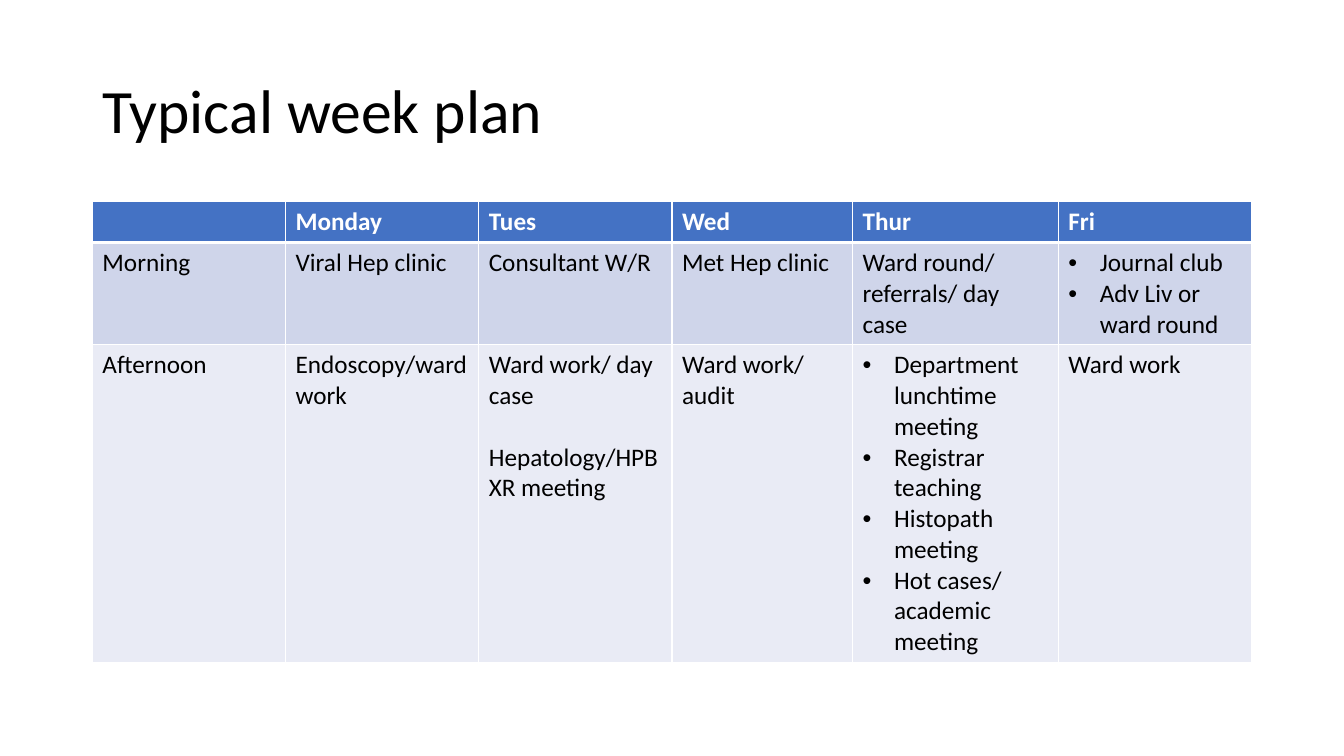
from lxml import etree
from pptx import Presentation
from pptx.dml.color import RGBColor
from pptx.enum.text import MSO_ANCHOR, MSO_AUTO_SIZE, PP_ALIGN
from pptx.oxml.ns import qn
from pptx.util import Pt

LEFT, MIDDLE, NO_FIT = PP_ALIGN.LEFT, MSO_ANCHOR.MIDDLE, MSO_AUTO_SIZE.NONE

BLACK = RGBColor(0x00, 0x00, 0x00)
WHITE = RGBColor(0xFF, 0xFF, 0xFF)
HEADER_BLUE = RGBColor(0x44, 0x72, 0xC4)
MORNING_BLUE = RGBColor(0xCF, 0xD5, 0xEA)
AFTERNOON_BLUE = RGBColor(0xE9, 0xEB, 0xF5)

LINE_GAP = 22
BULLET_INDENT = 22.5

# Each cell is a list of paragraphs; several activities become bullets
DAYS = ["", "Monday", "Tues", "Wed", "Thur", "Fri"]
MORNING = [
    ["Morning"],
    ["Viral Hep clinic"],
    ["Consultant W/R"],
    ["Met Hep clinic"],
    ["Ward round/ referrals/ day case"],
    ["• Journal club", "• Adv Liv or ward round"],
]
AFTERNOON = [
    ["Afternoon"],
    ["Endoscopy/ward work"],
    ["Ward work/ day case", "Hepatology/HPB XR meeting"],
    ["Ward work/ audit"],
    ["• Department lunchtime meeting", "• Registrar teaching",
     "• Histopath meeting", "• Hot cases/ academic meeting"],
    ["Ward work"],
]
DAY_WIDTHS = [138, 138, 138, 129, 147, 138]
# Row height, fill, text colour, bold, top and bottom border, cells
WEEK_ROWS = [
    (29.2, HEADER_BLUE, WHITE, True, 1, 3, [[day] for day in DAYS]),
    (72, MORNING_BLUE, BLACK, False, 3, 1, MORNING),
    (223.5, AFTERNOON_BLUE, BLACK, False, 1, 1, AFTERNOON),
]


class WeekSlide:
    """Holds the text style and the current slide."""

    def __init__(self, presentation, font="Calibri", size=18):
        self.slide = presentation.slides.add_slide(presentation.slide_layouts[5])
        self.font, self.size = font, size

    def style(self, paragraph, color, size=None, bold=False):
        paragraph.alignment = LEFT
        font = paragraph.font
        font.name, font.size, font.bold = self.font, Pt(size or self.size), bold
        font.color.rgb = color

    def title(self, text, left, top, width, height):
        heading = self.slide.shapes.title
        heading.left, heading.top = Pt(left), Pt(top)
        heading.width, heading.height = Pt(width), Pt(height)
        frame = heading.text_frame
        frame.text = text
        frame.auto_size, frame.vertical_anchor = NO_FIT, MIDDLE
        frame.paragraphs[0].line_spacing = 0.9
        self.style(frame.paragraphs[0], BLACK, size=44)

    def bullet(self, paragraph):
        properties = paragraph._p.get_or_add_pPr()
        properties.set("marL", str(Pt(BULLET_INDENT)))
        properties.set("indent", str(-Pt(BULLET_INDENT)))
        etree.SubElement(properties, qn("a:buFont")).set("typeface", "Arial")
        etree.SubElement(properties, qn("a:buChar")).set("char", "•")

    def borders(self, cell, top, bottom):
        properties = cell._tc.get_or_add_tcPr()
        edges = [("L", 1), ("R", 1), ("T", top), ("B", bottom)]
        for place, (side, width) in enumerate(edges):
            line = etree.Element(qn(f"a:ln{side}"), w=str(Pt(width)))
            fill = etree.SubElement(line, qn("a:solidFill"))
            etree.SubElement(fill, qn("a:srgbClr")).set("val", str(WHITE))
            properties.insert(place, line)

    def cell_text(self, cell, texts, color, bold):
        frame = cell.text_frame
        frame.text = "\n".join(text.removeprefix("• ") for text in texts)
        for index, (paragraph, text) in enumerate(zip(frame.paragraphs, texts)):
            if text.startswith("• "):
                self.bullet(paragraph)
            elif index:
                paragraph.space_before = Pt(LINE_GAP)
            self.style(paragraph, color, bold=bold)

    def table(self, left, top, widths, rows):
        height = sum(row[0] for row in rows)
        table = self.slide.shapes.add_table(
            len(rows), len(widths), Pt(left), Pt(top), Pt(sum(widths)), Pt(height)
        ).table
        for column, width in zip(table.columns, widths):
            column.width = Pt(width)
        for row, (height, fill, color, bold, above, below, cells) in zip(table.rows, rows):
            row.height = Pt(height)
            for cell, texts in zip(row.cells, cells):
                cell.fill.solid()
                cell.fill.fore_color.rgb = fill
                self.borders(cell, above, below)
                self.cell_text(cell, texts, color, bold)


def main():
    presentation = Presentation()
    presentation.slide_width, presentation.slide_height = Pt(960), Pt(540)
    week = WeekSlide(presentation)

    # Heading
    week.title("Typical week plan", 66, 28.75, 828, 104.4)

    # Timetable
    week.table(66, 144, DAY_WIDTHS, WEEK_ROWS)

    presentation.save("out.pptx")


if __name__ == "__main__":
    main()
